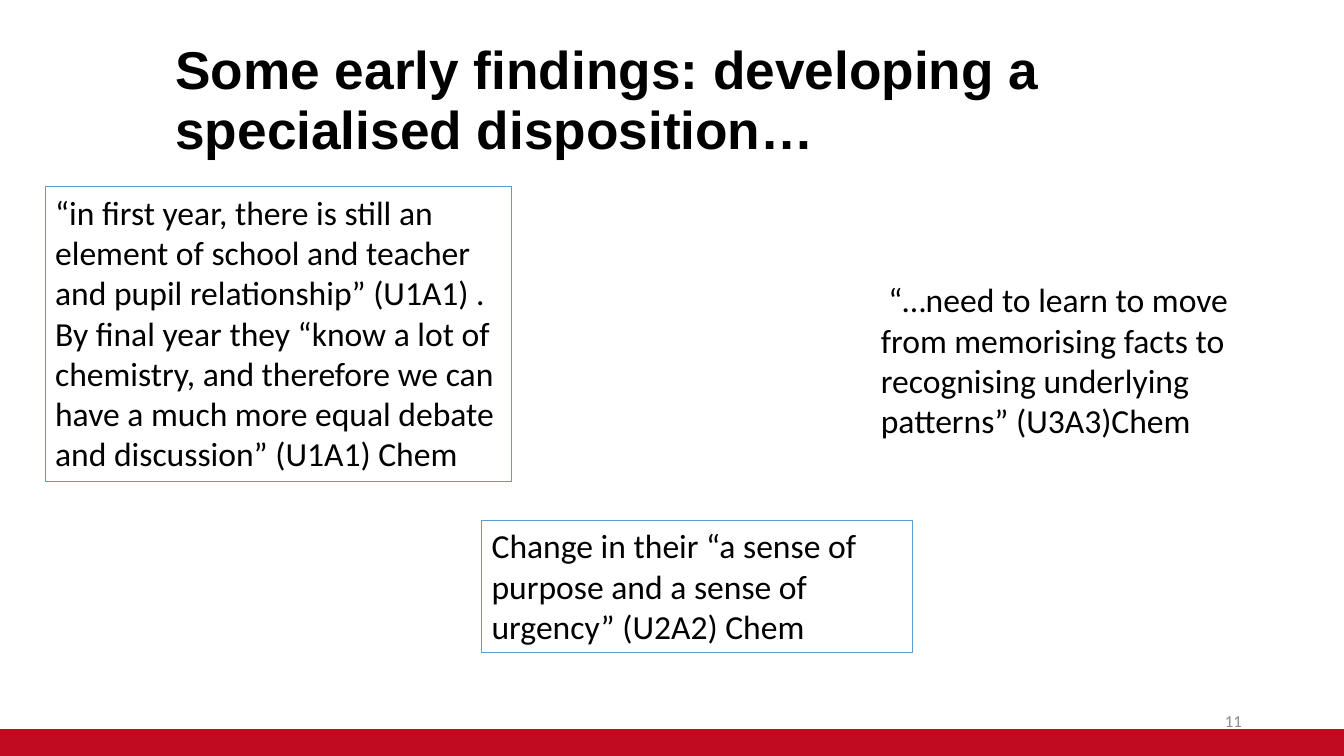
"""Slide of early findings: three interview quotes on developing a specialised disposition."""
from pptx import Presentation
from pptx.dml.color import RGBColor
from pptx.enum.shapes import MSO_CONNECTOR
from pptx.enum.text import MSO_ANCHOR, PP_ALIGN
from pptx.util import Cm, Pt
from lxml import etree

STRAIGHT = MSO_CONNECTOR.STRAIGHT
TOP, MIDDLE = MSO_ANCHOR.TOP, MSO_ANCHOR.MIDDLE
LEFT, RIGHT = PP_ALIGN.LEFT, PP_ALIGN.RIGHT
COLOURS = {"band": "C10B20", "frame": "5B9BD5", "text": "000000", "number": "8C8C8C"}
DRAWING_NS = "http://schemas.openxmlformats.org/drawingml/2006/main"


def colour(name):
    return RGBColor.from_string(COLOURS[name])


def add_text(box, words, size, font="Calibri", ink="text", anchor=TOP, align=LEFT):
    textbox = slide.shapes.add_textbox(*(Cm(length) for length in box))
    frame = textbox.text_frame
    frame.word_wrap = True
    frame.vertical_anchor = anchor
    frame.text = words
    paragraph = frame.paragraphs[0]
    paragraph.alignment = align
    paragraph.font.size = Pt(size)
    paragraph.font.name = font
    paragraph.font.color.rgb = colour(ink)
    return textbox


deck = Presentation()
deck.slide_width, deck.slide_height = Cm(33.87), Cm(19.05)
slide = deck.slides.add_slide(deck.slide_layouts[6])

footer_band = slide.shapes.add_connector(STRAIGHT, 0, Cm(18.72), deck.slide_width, Cm(18.72))
footer_band.line.color.rgb = colour("band")
footer_band.line.width = Pt(19.25)
etree.SubElement(footer_band._element.spPr, f"{{{DRAWING_NS}}}effectLst")

title = add_text((4.17, 1.02, 27.36, 3.07),
                 "Some early findings: developing a specialised disposition…",
                 38, font="Arial", anchor=MIDDLE)
title_line = title.text_frame.paragraphs[0]
title_line.font.bold = True
title_line.line_spacing = 0.95

add_text((23.93, 17.65, 7.62, 1.02), "11", 12, ink="number", anchor=MIDDLE, align=RIGHT)

quotes = [
    ((1.14, 4.7, 11.76, 7.44), True,
     "“in first year, there is still an element of school and teacher and pupil "
     "relationship” (U1A1) . By final year they “know a lot of chemistry, and therefore "
     "we can have a much more equal debate and discussion” (U1A1) Chem"),
    ((12.14, 13.11, 10.87, 3.33), True,
     "Change in their “a sense of purpose and a sense of urgency” (U2A2) Chem"),
    ((21.95, 6.91, 9.58, 4.37), False,
     " “…need to learn to move from memorising facts to recognising underlying "
     "patterns” (U3A3)Chem"),
]
for box, framed, words in quotes:
    quote = add_text(box, words, 24)
    if framed:
        quote.line.color.rgb = colour("frame")
        quote.line.width = Pt(0.75)

deck.save("out.pptx")
